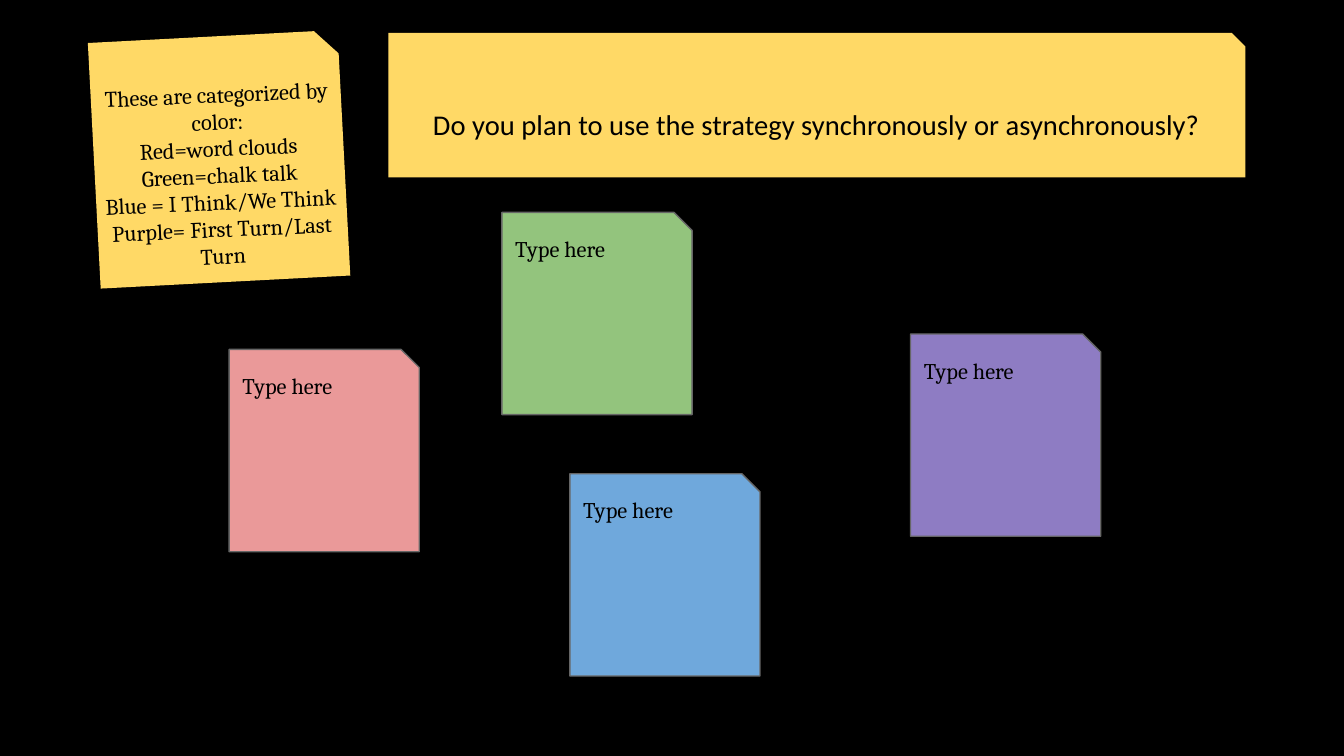
from dataclasses import dataclass
from typing import Optional

from lxml.etree import SubElement
from pptx import Presentation
from pptx.dml.color import RGBColor
from pptx.enum.text import MSO_ANCHOR, MSO_AUTO_SIZE, PP_ALIGN
from pptx.oxml.ns import qn
from pptx.util import Pt

EMU_PER_PX = 4572  # 200 px to the inch
MARGIN = 20
BLACK, GREY, YELLOW = "000000", "666666", "FFD966"


@dataclass(frozen=True)
class Note:
    left: int
    top: int
    width: int
    height: int
    cut: int
    fill: str
    line: Optional[str] = None
    rotation: float = 0


BANNER = Note(578, 49, 1275, 215, 20, YELLOW)
LEGEND = Note(140, 54, 372, 366, 35, YELLOW, rotation=357)
STICKIES = [
    Note(left, top, 283, 301, 27, fill, GREY)
    for left, top, fill in [
        (1355, 497, "8E7CC3"),
        (848, 705, "6FA8DC"),
        (341, 520, "EA9999"),
        (747, 316, "93C47D"),
    ]
]
TITLE = "Do you plan to use the strategy synchronously or asynchronously?"
CATEGORIES = [
    "These are categorized by color:",
    "Red=word clouds",
    "Green=chalk talk",
    "Blue = I Think/We Think",
    "Purple= First Turn/Last Turn",
]


def px(length: int) -> int:
    return length * EMU_PER_PX


def color(value: str) -> RGBColor:
    return RGBColor.from_string(value)


def add_shadow(shape) -> None:
    shape.shadow.inherit = False
    effects = shape._element.spPr.find(qn("a:effectLst"))
    shadow = SubElement(effects, qn("a:outerShdw"), blurRad=str(Pt(5)),
                        dist=str(Pt(1.5)), dir="5400000", rotWithShape="0")
    shade = SubElement(shadow, qn("a:srgbClr"), val=BLACK)
    SubElement(shade, qn("a:alpha"), val="50000")


def draw_note(shapes, note: Note) -> None:
    """Draw a sheet whose top right corner is cut off."""
    right, bottom = note.left + note.width, note.top + note.height
    builder = shapes.build_freeform(note.left, note.top, scale=EMU_PER_PX)
    builder.add_line_segments([
        (right - note.cut, note.top),
        (right, note.top + note.cut),
        (right, bottom),
        (note.left, bottom),
    ])
    sheet = builder.convert_to_shape()
    sheet.rotation = note.rotation
    sheet.fill.solid()
    sheet.fill.fore_color.rgb = color(note.fill)
    if note.line:
        sheet.line.color.rgb = color(note.line)
        sheet.line.width = Pt(0.75)
    else:
        sheet.line.fill.background()
    add_shadow(sheet)


def place(box, left: int, top: int, width: int, height: int) -> None:
    box.left, box.top, box.width, box.height = map(px, (left, top, width, height))


def write(box, lines: list[str], font: str, size: float,
          align: PP_ALIGN, anchor: MSO_ANCHOR = MSO_ANCHOR.TOP) -> None:
    frame = box.text_frame
    frame.word_wrap = True
    frame.auto_size = MSO_AUTO_SIZE.NONE
    frame.vertical_anchor = anchor
    frame.margin_left = frame.margin_right = px(MARGIN)
    frame.margin_top = frame.margin_bottom = px(MARGIN)
    for index, line in enumerate(lines):
        para = frame.add_paragraph() if index else frame.paragraphs[0]
        para.alignment = align
        para.space_before = Pt(0)
        properties = para._p.get_or_add_pPr()
        properties.set("marL", "0")
        properties.set("indent", "0")
        SubElement(properties, qn("a:buNone"))
        span = para.add_run()
        span.text = line
        span.font.name = font
        span.font.size = Pt(size)
        span.font.color.rgb = color(BLACK)


def draw_sticky(page, note: Note) -> None:
    group = page.shapes.add_group_shape()
    draw_note(group.shapes, note)
    box = group.shapes.add_textbox(px(note.left), px(note.top + 14), px(270), px(78))
    write(box, ["Type here"], "Cambria", 12, PP_ALIGN.LEFT)
    box.text_frame.auto_size = MSO_AUTO_SIZE.SHAPE_TO_FIT_TEXT


def main() -> None:
    deck = Presentation()
    deck.slide_width, deck.slide_height = px(2000), px(1125)
    page = deck.slides.add_slide(deck.slide_layouts[1])
    page.background.fill.solid()
    page.background.fill.fore_color.rgb = color(BLACK)

    for note in (BANNER, LEGEND):
        draw_note(page.shapes, note)

    title, body = page.shapes.title, page.placeholders[1]
    for box in (title, body):  # bring the text in front of its sheet
        page.shapes._spTree.append(box._element)
    place(title, 568, 108, 1294, 122)
    write(title, [TITLE], "Calibri", 15.3, PP_ALIGN.CENTER, MSO_ANCHOR.BOTTOM)
    place(body, 126, 100, 402, 324)
    body.rotation = 357.5
    write(body, CATEGORIES, "Cambria", 12, PP_ALIGN.CENTER)

    for note in STICKIES:
        draw_sticky(page, note)
    deck.save("out.pptx")


if __name__ == "__main__":
    main()
